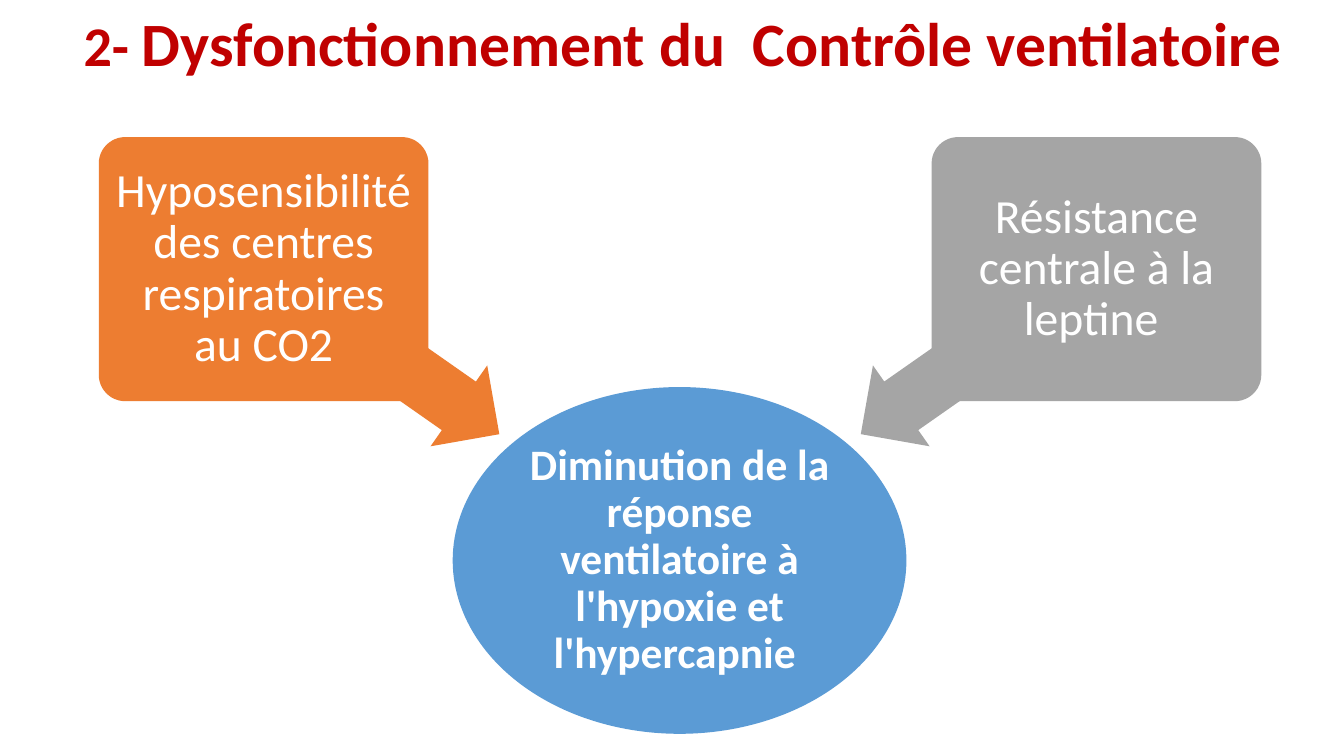
from dataclasses import dataclass

from pptx import Presentation
from pptx import util as u
from pptx.dml.color import RGBColor
from pptx.enum import shapes, text

KIND = shapes.MSO_SHAPE


@dataclass
class Theme:
    font: str = "Calibri"
    title: str = "C00000"
    white: str = "FFFFFF"
    orange: str = "ED7D31"
    grey: str = "A5A5A5"
    blue: str = "5B9BD5"
    number: int = 40
    head: int = 44
    cause: int = 34
    effect: int = 31


class Board:
    def __init__(self, slide, theme):
        self.slide = slide
        self.theme = theme

    def label(self, frame, runs, color, bold=False, pad=0.1, gap=1.0, wrap=True):
        """Fill a text frame with one centred paragraph of (words, size) runs."""
        frame.word_wrap = wrap
        frame.auto_size = text.MSO_AUTO_SIZE.NONE
        frame.vertical_anchor = text.MSO_ANCHOR.MIDDLE
        frame.margin_left = frame.margin_right = u.Inches(pad)
        frame.margin_top = frame.margin_bottom = u.Inches(min(pad, 0.05))
        para = frame.paragraphs[0]
        para.alignment = text.PP_ALIGN.CENTER
        para.line_spacing = gap
        para.space_before = para.space_after = u.Pt(0)
        for words, size in runs:
            run = para.add_run()
            run.text = words
            run.font.name = self.theme.font
            run.font.size = u.Pt(size)
            run.font.bold = bold
            run.font.color.rgb = RGBColor.from_string(color)

    def title(self, runs, box):
        head = self.slide.shapes.title
        head.left, head.top, head.width, head.height = map(u.Inches, box)
        self.label(head.text_frame, runs, self.theme.title, bold=True, wrap=False)

    def shape(self, kind, box, fill, adjust=(), turn=0):
        item = self.slide.shapes.add_shape(kind, *map(u.Inches, box))
        item.shadow.inherit = False
        item.fill.solid()
        item.fill.fore_color.rgb = RGBColor.from_string(fill)
        item.line.fill.background()
        item.rotation = turn
        for i, value in enumerate(adjust):
            item.adjustments[i] = value
        return item

    def cause(self, words, mid, turn, fill):
        """Draw a rounded box centred on mid and its arrow towards the effect."""
        side = 1 if mid < AXIS else -1
        self.shape(KIND.LEFT_ARROW, (mid + side * 1.17 - 1.42, 3, 2.85, 0.98),
                   fill, (0.6, 0.5), turn)
        box = self.shape(KIND.ROUNDED_RECTANGLE, (mid - 1.63, 1.36, 3.27, 2.62),
                         fill, (0.1,))
        self.label(box.text_frame, [(words, self.theme.cause)],
                   self.theme.white, pad=0.07, gap=0.9)

    def effect(self, words):
        oval = self.shape(KIND.OVAL, (AXIS - 2.25, 3.84, 4.5, 3.44), self.theme.blue)
        self.label(oval.text_frame, [(words, self.theme.effect)],
                   self.theme.white, bold=True, pad=0.02, gap=0.9)


AXIS = 6.74
REACH = 4.13


def main():
    deck = Presentation()
    deck.slide_width, deck.slide_height = u.Inches(13.33), u.Inches(7.5)
    look = Theme()
    board = Board(deck.slides.add_slide(deck.slide_layouts[5]), look)
    board.title([("2- ", look.number),
                 ("Dysfonctionnement du  Contrôle ventilatoire", look.head)],
                (0.54, 0, 12.47, 0.84))
    board.effect("Diminution de la réponse ventilatoire à l'hypoxie et l'hypercapnie ")
    board.cause("Hyposensibilité des centres respiratoires au CO2",
                AXIS - REACH, 215, look.orange)
    board.cause("Résistance centrale à la leptine ", AXIS + REACH, 325, look.grey)
    deck.save("out.pptx")


if __name__ == "__main__":
    main()
